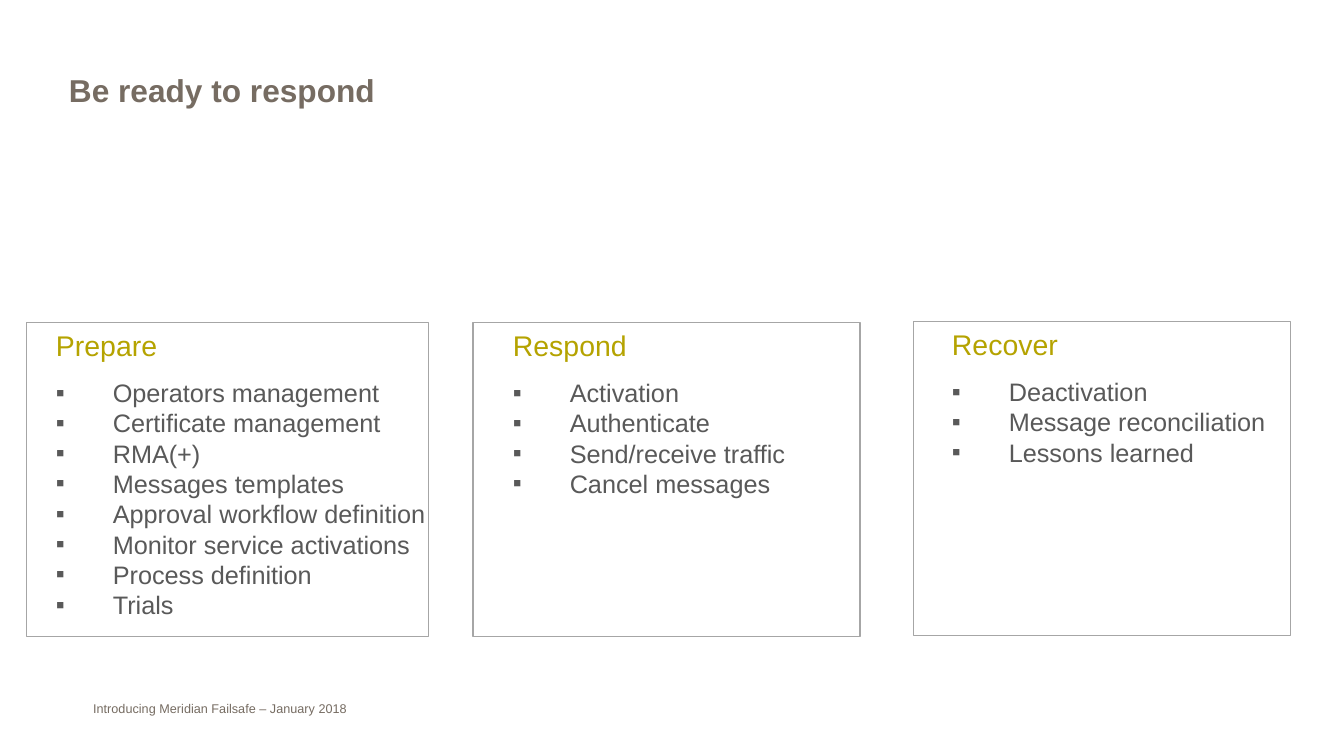
from dataclasses import dataclass

from lxml.etree import SubElement
from pptx import Presentation
from pptx.dml.color import RGBColor
from pptx.enum.shapes import MSO_SHAPE as Shape
from pptx.enum.text import PP_ALIGN as Align
from pptx.oxml.ns import qn
from pptx.slide import Slide
from pptx.text.text import TextFrame
from pptx.util import Cm, Pt


@dataclass(frozen=True)
class Theme:
    font: str = "Arial"
    white: str = "FFFFFF"
    border: str = "A6A6A6"
    taupe: str = "766C62"
    olive: str = "B5A300"
    gray: str = "595959"
    title_size: int = 20
    heading_size: int = 18
    bullet_size: int = 16
    footer_size: int = 8


@dataclass(frozen=True)
class Phase:
    """One stage of the response; lengths are in centimetres."""
    heading: str
    items: tuple[str, ...]
    left: float
    top: float
    width: float
    text_left: float
    text_width: float


THEME = Theme()
PHASE_HEIGHT = 7.01
HEADING_HEIGHT = 2.0
ITEM_HEIGHT = 0.68
BULLET_INDENT = Cm(1.27)

PHASES = (
    Phase("Prepare",
          ("Operators management", "Certificate management", "RMA(+)",
           "Messages templates", "Approval workflow definition",
           "Monitor service activations", "Process definition", "Trials"),
          left=0.6, top=7.2, width=8.97, text_left=1.0, text_width=8.84),
    Phase("Respond",
          ("Activation", "Authenticate", "Send/receive traffic", "Cancel messages"),
          left=10.56, top=7.2, width=8.64, text_left=11.2, text_width=6.65),
    Phase("Recover",
          ("Deactivation", "Message reconciliation", "Lessons learned"),
          left=20.4, top=7.18, width=8.41, text_left=21.0, text_width=7.59),
)


def add_text_frame(slide: Slide, left: float, top: float, width: float, height: float,
                   margin_x: float = 0.25, margin_y: float = 0.13) -> TextFrame:
    frame = slide.shapes.add_textbox(Cm(left), Cm(top), Cm(width), Cm(height)).text_frame
    frame.word_wrap = True
    frame.margin_left = frame.margin_right = Cm(margin_x)
    frame.margin_top = frame.margin_bottom = Cm(margin_y)
    return frame


def write(frame: TextFrame, text: str, *, size: int, color: str, bold: bool = False,
          bullet: str = "", space_after: float = 0) -> None:
    """Fill the first paragraph if it is empty, otherwise append one."""
    first = frame.paragraphs[0]
    paragraph = frame.add_paragraph() if first.runs else first
    paragraph.alignment = Align.LEFT
    paragraph.space_after = Pt(space_after)
    if bullet:
        properties = paragraph._p.get_or_add_pPr()
        properties.set("marL", str(BULLET_INDENT))
        properties.set("indent", str(-BULLET_INDENT))
        SubElement(properties, qn("a:buFont"), typeface=THEME.font)
        SubElement(properties, qn("a:buChar"), char=bullet)
    run = paragraph.add_run()
    run.text = text
    run.font.name = THEME.font
    run.font.size = Pt(size)
    run.font.bold = bold
    run.font.color.rgb = RGBColor.from_string(color)


def add_phase(slide: Slide, phase: Phase) -> None:
    box = slide.shapes.add_shape(Shape.RECTANGLE, Cm(phase.left), Cm(phase.top),
                                 Cm(phase.width), Cm(PHASE_HEIGHT))
    box.shadow.inherit = False
    box.fill.solid()
    box.fill.fore_color.rgb = RGBColor.from_string(THEME.white)
    box.line.color.rgb = RGBColor.from_string(THEME.border)
    box.line.width = Pt(0.75)

    frame = add_text_frame(slide, phase.text_left, phase.top, phase.text_width,
                           HEADING_HEIGHT + ITEM_HEIGHT * len(phase.items))
    write(frame, phase.heading, size=THEME.heading_size, color=THEME.olive, space_after=9.4)
    for item in phase.items:
        write(frame, item, size=THEME.bullet_size, color=THEME.gray, bullet="▪")


def main() -> None:
    presentation = Presentation()
    presentation.slide_width = Cm(30)
    presentation.slide_height = Cm(16.88)
    slide = presentation.slides.add_slide(presentation.slide_layouts[6])

    footer = add_text_frame(slide, 1.83, 15.53, 15.77, 0.64)
    write(footer, "Introducing Meridian Failsafe – January 2018",
          size=THEME.footer_size, color=THEME.taupe)
    title = add_text_frame(slide, 1.24, 1.44, 9.35, 1.47, margin_x=0.3, margin_y=0.15)
    write(title, "Be ready to respond", size=THEME.title_size, color=THEME.taupe, bold=True)
    for phase in PHASES:
        add_phase(slide, phase)

    presentation.save("out.pptx")


if __name__ == "__main__":
    main()
